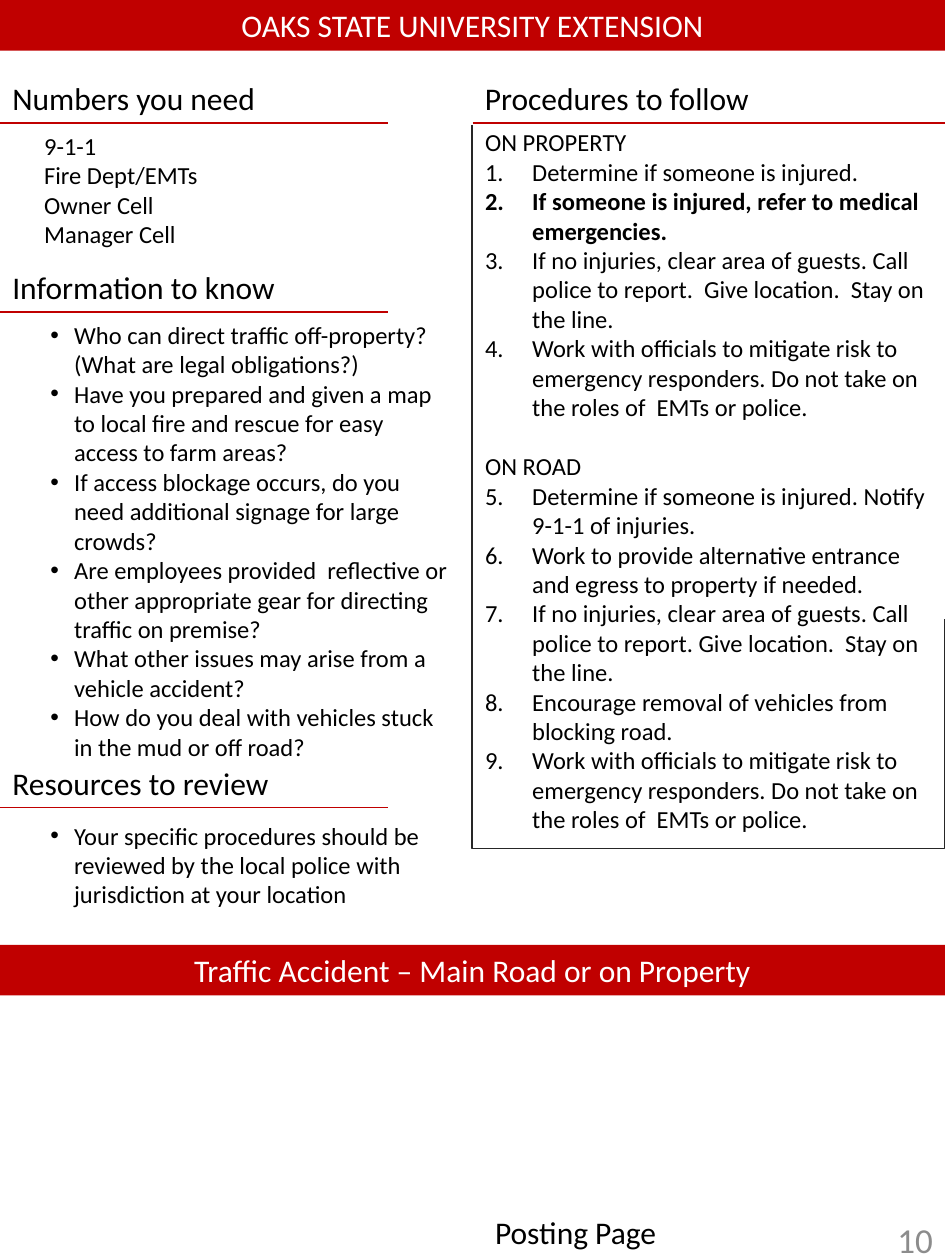
from lxml.etree import SubElement as Sub
from pptx import Presentation as Deck
from pptx.dml.color import RGBColor as Rgb
from pptx.enum.shapes import MSO_CONNECTOR as Link, MSO_SHAPE as Form
from pptx.enum.text import MSO_ANCHOR as Anchor, MSO_AUTO_SIZE as Auto, PP_ALIGN as Align
from pptx.oxml.ns import qn
from pptx.util import Cm, Pt

THEME = {
    "font": "Calibri", "red": "C00000", "dark": "262626", "black": "000000",
    "white": "FFFFFF", "grey": "8C8C8C",
    "head": 18, "body": 14, "page": 20, "line": 0.75,
}
WIDE, HIGH = 19.05, 25.4
MID = WIDE / 2
BAR = ROW = 1.02
DROP = 1.01

TITLE = "OAKS STATE UNIVERSITY EXTENSION"
TOPIC = "Traffic Accident – Main Road or on Property"
HEADS = [
    ("Numbers you need", 0, 1.47, 7.82),
    ("Information to know", 0, 5.28, 7.82),
    ("Resources to review", 0, 15.27, 7.82),
    ("Procedures to follow", MID, 1.47, MID),
]
PHONES = ["9-1-1", "Fire Dept/EMTs", "Owner Cell", "Manager Cell"]
FACTS = [
    "Who can direct traffic off-property? (What are legal obligations?)",
    "Have you prepared and given a map to local fire and rescue for easy access to farm areas?",
    "If access blockage occurs, do you need additional signage for large crowds?",
    "Are employees provided  reflective or other appropriate gear for directing traffic on premise?",
    "What other issues may arise from a vehicle accident?",
    "How do you deal with vehicles stuck in the mud or off road?",
]
REVIEW = "Your specific procedures should be reviewed by the local police with jurisdiction at your location"
BOLD = "If someone is injured, refer to medical emergencies."
STEPS = [
    ("ON PROPERTY", [
        "Determine if someone is injured.",
        BOLD,
        "If no injuries, clear area of guests. Call police to report.  Give location.  Stay on the line.",
        "Work with officials to mitigate risk to emergency responders. Do not take on the roles of  EMTs or police.",
    ]),
    ("ON ROAD", [
        "Determine if someone is injured. Notify 9-1-1 of injuries.",
        "Work to provide alternative entrance and egress to property if needed.",
        "If no injuries, clear area of guests. Call police to report. Give location.  Stay on the line.",
        "Encourage removal of vehicles from blocking road.",
        "Work with officials to mitigate risk to emergency responders. Do not take on the roles of  EMTs or police.",
    ]),
]


def tint(name):
    return Rgb.from_string(THEME[name])


def place(shape, x, y, w, h):
    shape.left, shape.top, shape.width, shape.height = Cm(x), Cm(y), Cm(w), Cm(h)
    return shape


def write(shape, lines, size="body", ink="black", align=Align.LEFT, anchor=Anchor.TOP):
    frame = shape.text_frame
    frame.word_wrap = True
    frame.auto_size = Auto.NONE
    frame.vertical_anchor = anchor
    for i, (text, mark, start, gap) in enumerate(lines):
        para = frame.paragraphs[0] if i == 0 else frame.add_paragraph()
        para.text = text
        para.alignment = align
        para.space_before = Pt(gap)
        props = para._p.get_or_add_pPr()
        dent = Cm({"dot": 0.48, "num": 0.95}.get(mark, 0))
        props.set("marL", str(dent))
        props.set("indent", str(-dent))
        if mark == "dot":
            Sub(props, qn("a:buFont"), typeface="Arial")
            Sub(props, qn("a:buChar"), char="•")
        elif mark == "num":
            Sub(props, qn("a:buFont"), typeface="+mj-lt")
            Sub(props, qn("a:buAutoNum"), type="arabicPeriod", startAt=str(start))
        else:
            Sub(props, qn("a:buNone"))
        font = para.font
        font.name, font.size = THEME["font"], Pt(THEME[size])
        font.bold = text == BOLD
        font.color.rgb = tint(ink)


def plain(*texts):
    return [(text, None, 0, 0) for text in texts]


def label(slide, text, x, y, w, h=ROW, **look):
    box = slide.shapes.add_textbox(Cm(x), Cm(y), Cm(w), Cm(h))
    write(box, plain(text), **{"size": "head", **look})


def banner(shape, text):
    shape.fill.solid()
    shape.fill.fore_color.rgb = tint("red")
    shape.line.fill.background()
    write(shape, plain(text), "head", "white", Align.CENTER, Anchor.MIDDLE)


def stroke(slide, kind, x, y, to_x, to_y, ink):
    line = slide.shapes.add_connector(kind, Cm(x), Cm(y), Cm(to_x), Cm(to_y))
    line.line.color.rgb = tint(ink)
    line.line.width = Pt(THEME["line"])
    Sub(line._element.spPr, qn("a:effectLst"))
    return line


def frame_steps(slide):
    bend = stroke(slide, Link.ELBOW, 9.3, 2.74, 19.26, 12.27, "dark")
    props = bend._element.spPr
    turn = props.find(qn("a:xfrm"))
    turn.set("rot", "16200000")
    turn.set("flipH", "1")
    shape = props.find(qn("a:prstGeom"))
    Sub(shape.find(qn("a:avLst")), qn("a:gd"), name="adj1", fmla="val 146400")


def main():
    deck = Deck()
    deck.slide_width, deck.slide_height = Cm(WIDE), Cm(HIGH)
    slide = deck.slides.add_slide(deck.slide_layouts[3])
    title, facts, steps = slide.placeholders

    banner(place(title, 0, 0, WIDE, BAR), TITLE)
    foot = slide.shapes.add_shape(Form.RECTANGLE, 0, Cm(WIDE), Cm(WIDE), Cm(BAR))
    foot.shadow.inherit = False
    banner(foot, TOPIC)

    for text, x, y, rule in HEADS:
        label(slide, text, x, y, 8.46 if x else 6.3)
        stroke(slide, Link.STRAIGHT, x, y + DROP, x + rule, y + DROP, "red")

    phones = slide.shapes.add_textbox(Cm(0.64), Cm(2.51), Cm(8.89), Cm(3.25))
    write(phones, plain(*PHONES))

    dots = [(text, "dot", 1, 0) for text in FACTS] + [(REVIEW, "dot", 1, 34)]
    write(place(facts, 0.76, 6.32, 8.56, 12.22), dots)

    rows, start = [], 1
    for head, items in STEPS:
        rows.append((head, None, 0, 17 if rows else 0))
        rows += [(text, "num", start, 0) for text in items]
        start += len(items)
    write(place(steps, MID, 2.44, MID, 15.82), rows)
    frame_steps(slide)

    label(slide, "Posting Page", 9.73, 24.33, 9.32)
    label(slide, "10", 14.61, 24.56, 4.45, 0.84, size="page", ink="grey",
          align=Align.RIGHT, anchor=Anchor.MIDDLE)
    deck.save("out.pptx")


if __name__ == "__main__":
    main()
